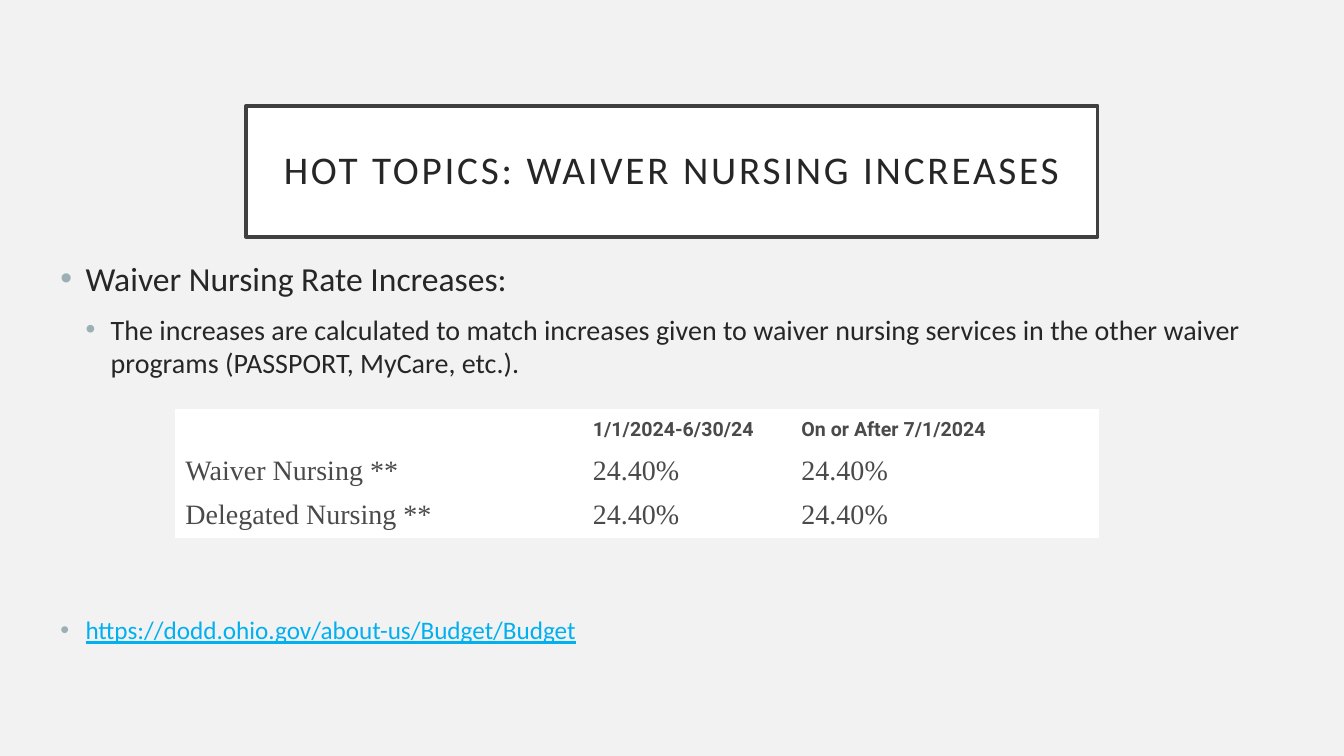
from pptx import Presentation
from pptx.dml.color import RGBColor as RGB
from pptx.enum.shapes import MSO_SHAPE as SHAPE
from pptx.enum.text import MSO_ANCHOR as ANCHOR, PP_ALIGN as ALIGN
from pptx.oxml import parse_xml
from pptx.oxml.ns import nsdecls
from pptx.util import Pt

COLORS = {"bg": "F2F2F2", "white": "FFFFFF", "frame": "404040", "text": "262626",
          "bullet": "9BAFB5", "link": "00B0F0", "cell": "4A4A4A"}
TITLE = "HOT TOPICS: WAIVER NURSING INCREASES"
BODY = [
    ("Waiver Nursing Rate Increases:", 0, 10, {"size": Pt(24)}, "text"),
    ("The increases are calculated to match increases given to waiver nursing services "
     "in the other waiver programs (PASSPORT, MyCare, etc.).", 1, 10, {"size": Pt(20)}, "text"),
    ("https://dodd.ohio.gov/about-us/Budget/Budget", 0, 168,
     {"size": Pt(18), "underline": True}, "link"),
]
RATES = [
    ("", "1/1/2024-6/30/24", "On or After 7/1/2024"),
    ("Waiver Nursing **", "24.40%", "24.40%"),
    ("Delegated Nursing **", "24.40%", "24.40%"),
]
COLUMNS, ROWS = (291, 149, 219), (28.4, 30, 30)
HEADER = {"name": "Roboto", "size": Pt(14), "bold": True}
VALUE = {"name": "Times New Roman", "size": Pt(20), "bold": False}
INDENT = 18


def rgb(key):
    """Return a palette colour."""
    return RGB.from_string(COLORS[key])


def paint(fill, key):
    """Fill with a solid palette colour."""
    fill.solid()
    fill.fore_color.rgb = rgb(key)


def add_run(p, text, style, key):
    """Add a formatted run and return it."""
    r = p.add_run()
    r.text = text
    for name, value in ({"name": "Calibri"} | style).items():
        setattr(r.font, name, value)
    r.font.color.rgb = rgb(key)
    return r


def add_bullet(p, level):
    """Give a paragraph a hanging bullet."""
    pPr = p._p.get_or_add_pPr()
    pPr.set("marL", str(Pt(INDENT * (level + 1))))
    pPr.set("indent", str(Pt(-INDENT)))
    ns = nsdecls("a")
    for xml in (f'<a:buClr {ns}><a:srgbClr val="{COLORS["bullet"]}"/></a:buClr>',
                f'<a:buFont {ns} typeface="Arial"/>', f'<a:buChar {ns} char="•"/>'):
        pPr.append(parse_xml(xml))


def add_title(s):
    """Draw the framed title."""
    sp = s.shapes.add_shape(SHAPE.RECTANGLE, Pt(175.7), Pt(75.6), Pt(608.4), Pt(93.6))
    sp.shadow.inherit = False
    paint(sp.fill, "white")
    paint(sp.line.fill, "frame")
    sp.line.width = Pt(2.5)
    tf = sp.text_frame
    tf.word_wrap, tf.vertical_anchor = True, ANCHOR.MIDDLE
    for side in ("left", "top", "right", "bottom"):
        setattr(tf, f"margin_{side}", Pt(14.4))
    p = tf.paragraphs[0]
    p.alignment, p.line_spacing = ALIGN.CENTER, 0.9
    r = add_run(p, TITLE, {"size": Pt(28)}, "text")
    r.font._element.set("spc", "200")


def add_body(s):
    """Write the bulleted text."""
    tf = s.shapes.add_textbox(Pt(36), Pt(180.7), Pt(899.3), Pt(329.8)).text_frame
    tf.word_wrap = True
    for i, (text, level, gap, style, key) in enumerate(BODY):
        p = tf.add_paragraph() if i else tf.paragraphs[0]
        p.level, p.space_before = level, Pt(gap)
        add_bullet(p, level)
        add_run(p, text, style, key)


def add_rates(s):
    """Build the rate table."""
    table = s.shapes.add_table(len(ROWS), len(COLUMNS), Pt(125.3), Pt(292.3),
                               Pt(sum(COLUMNS)), Pt(sum(ROWS))).table
    table.first_row = table.horz_banding = False
    for column, width in zip(table.columns, COLUMNS):
        column.width = Pt(width)
    for i, (row, height, texts) in enumerate(zip(table.rows, ROWS, RATES)):
        row.height = Pt(height)
        for cell, text in zip(row.cells, texts):
            paint(cell.fill, "white")
            cell.vertical_anchor = ANCHOR.MIDDLE
            if text:
                add_run(cell.text_frame.paragraphs[0], text, VALUE if i else HEADER, "cell")


def main():
    """Build and save the slide."""
    prs = Presentation()
    prs.slide_width, prs.slide_height = Pt(960), Pt(540)
    s = prs.slides.add_slide(prs.slide_layouts[6])
    paint(s.background.fill, "bg")
    add_title(s)
    add_body(s)
    add_rates(s)
    prs.save("out.pptx")


if __name__ == "__main__":
    main()
